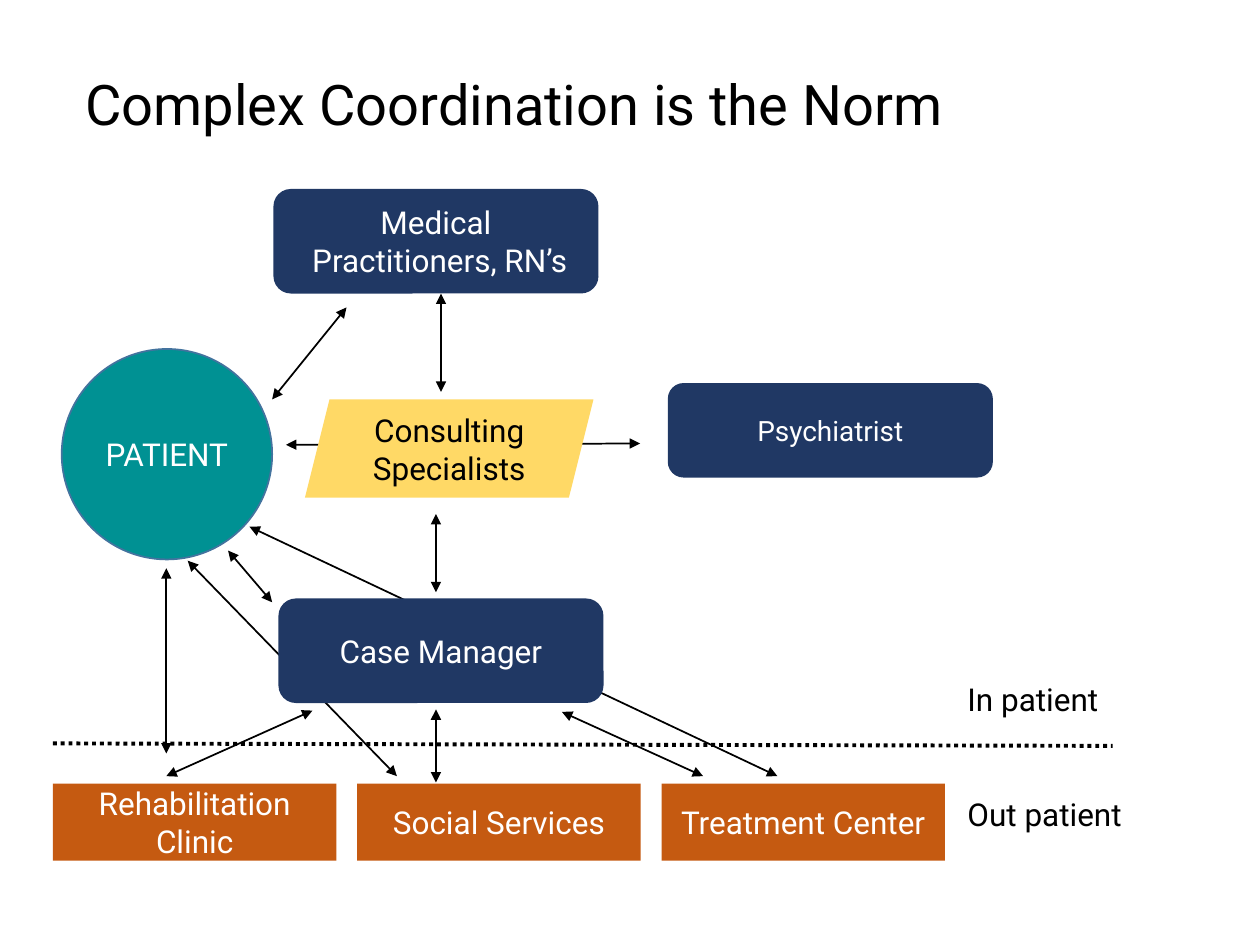
"""Build a slide on the coordination of in-patient and out-patient care."""
from lxml.etree import SubElement
from pptx import Presentation
from pptx.dml.color import RGBColor
from pptx.enum.dml import MSO_LINE
from pptx.enum.shapes import MSO_CONNECTOR, MSO_SHAPE
from pptx.enum.text import MSO_ANCHOR, MSO_AUTO_SIZE, PP_ALIGN
from pptx.oxml.ns import qn
from pptx.util import Pt

EMU_PER_PX = 9144
FONT = "Roboto"
COLORS = {
    "navy": "203864",
    "teal": "009193",
    "teal_edge": "43739E",
    "orange": "C55A11",
    "yellow": "FFD966",
    "white": "FFFFFF",
    "black": "000000",
}
ARROWS_BEHIND = [
    (149, 445, 315, 616),
    (198, 418, 617, 616),
    (227, 353, 508, 352),
]
ARROWS_IN_FRONT = [
    (216, 317, 275, 244),
    (346, 470, 346, 408),
    (350, 311, 350, 233),
    (181, 437, 216, 478),
    (558, 616, 446, 565),
    (346, 621, 346, 563),
    (132, 616, 248, 564),
    (132, 451, 132, 598),
]
CARE_TEAM = [
    ("Medical\n Practitioners, RN’s", (217, 150, 258, 83), 18),
    ("Psychiatrist", (530, 304, 258, 75), 16),
    ("Case Manager", (221, 475, 258, 83), 18),
]
OUTPATIENT_SERVICES = ["Rehabilitation Clinic", "Social Services", "Treatment Center"]
SERVICE_LEFT, SERVICE_PITCH = 42, 241.5
LABELS = [
    ("In patient", (758, 535, 133, 40), 18),
    ("Out patient", (758, 626, 167, 40), 18),
    ("Complex Coordination is the Norm", (58, 50, 900, 64), 32),
]


def px(*lengths):
    """Turn pixel lengths into EMU."""
    return [round(length * EMU_PER_PX) for length in lengths]


def rgb(name):
    """Look up a named colour."""
    return RGBColor.from_string(COLORS[name])


def set_text(shape, text, size, color, align):
    """Write text into a shape and format its runs."""
    frame = shape.text_frame
    frame.text = text
    frame.word_wrap = True
    for para in frame.paragraphs:
        para.alignment = align
        for span in para.runs:
            span.font.name = FONT
            span.font.size = Pt(size)
            span.font.color.rgb = rgb(color)


def add_node(page, kind, text, bounds, fill, size=18, color="white", edge=None):
    """Add a filled shape with centred text."""
    node = page.shapes.add_shape(kind, *px(*bounds))
    node.shadow.inherit = False
    node.fill.solid()
    node.fill.fore_color.rgb = rgb(fill)
    if edge:
        node.line.color.rgb = rgb(edge)
        node.line.width = Pt(1)
    else:
        node.line.fill.background()
    set_text(node, text, size, color, PP_ALIGN.CENTER)
    node.text_frame.vertical_anchor = MSO_ANCHOR.MIDDLE


def add_label(page, text, bounds, size):
    """Add a plain text box."""
    box = page.shapes.add_textbox(*px(*bounds))
    set_text(box, text, size, "black", PP_ALIGN.LEFT)
    box.text_frame.auto_size = MSO_AUTO_SIZE.SHAPE_TO_FIT_TEXT


def add_line(page, ends, width):
    """Add a straight black line without a shadow."""
    line = page.shapes.add_connector(MSO_CONNECTOR.STRAIGHT, *px(*ends))
    line.line.color.rgb = rgb("black")
    line.line.width = Pt(width)
    SubElement(line._element.spPr, qn("a:effectLst"))
    return line


def add_arrow(page, ends):
    """Add a line with an arrowhead at both ends."""
    outline = add_line(page, ends, 1).line._get_or_add_ln()
    for tag in ("a:headEnd", "a:tailEnd"):
        SubElement(outline, qn(tag), type="triangle")


def main():
    """Build and save the slide."""
    deck = Presentation()
    deck.slide_width, deck.slide_height = px(1000, 750)
    page = deck.slides.add_slide(deck.slide_layouts[6])

    for ends in ARROWS_BEHIND:
        add_arrow(page, ends)
    for text, bounds, size in CARE_TEAM:
        add_node(page, MSO_SHAPE.ROUNDED_RECTANGLE, text, bounds, "navy", size)
    add_node(page, MSO_SHAPE.OVAL, "PATIENT", (49, 277, 167, 167), "teal", edge="teal_edge")
    divider = add_line(page, (42, 590, 883, 592), 2.25)
    divider.line.dash_style = MSO_LINE.ROUND_DOT
    for index, text in enumerate(OUTPATIENT_SERVICES):
        bounds = (SERVICE_LEFT + index * SERVICE_PITCH, 622, 225, 61)
        add_node(page, MSO_SHAPE.RECTANGLE, text, bounds, "orange")
    add_node(page, MSO_SHAPE.PARALLELOGRAM, "Consulting Specialists",
             (242, 317, 229, 78), "yellow", color="black")
    for text, bounds, size in LABELS:
        add_label(page, text, bounds, size)
    for ends in ARROWS_IN_FRONT:
        add_arrow(page, ends)

    deck.save("out.pptx")


if __name__ == "__main__":
    main()
